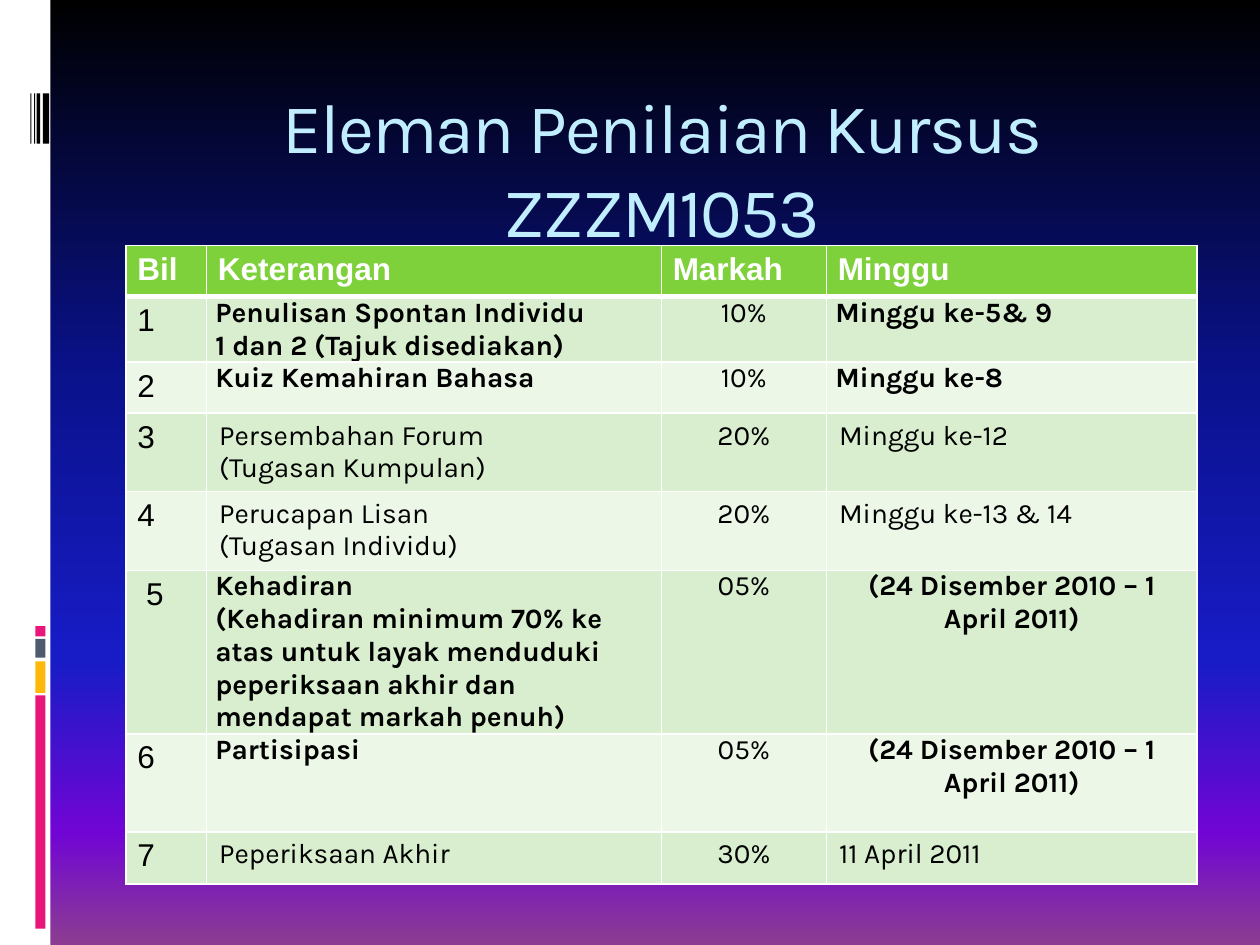
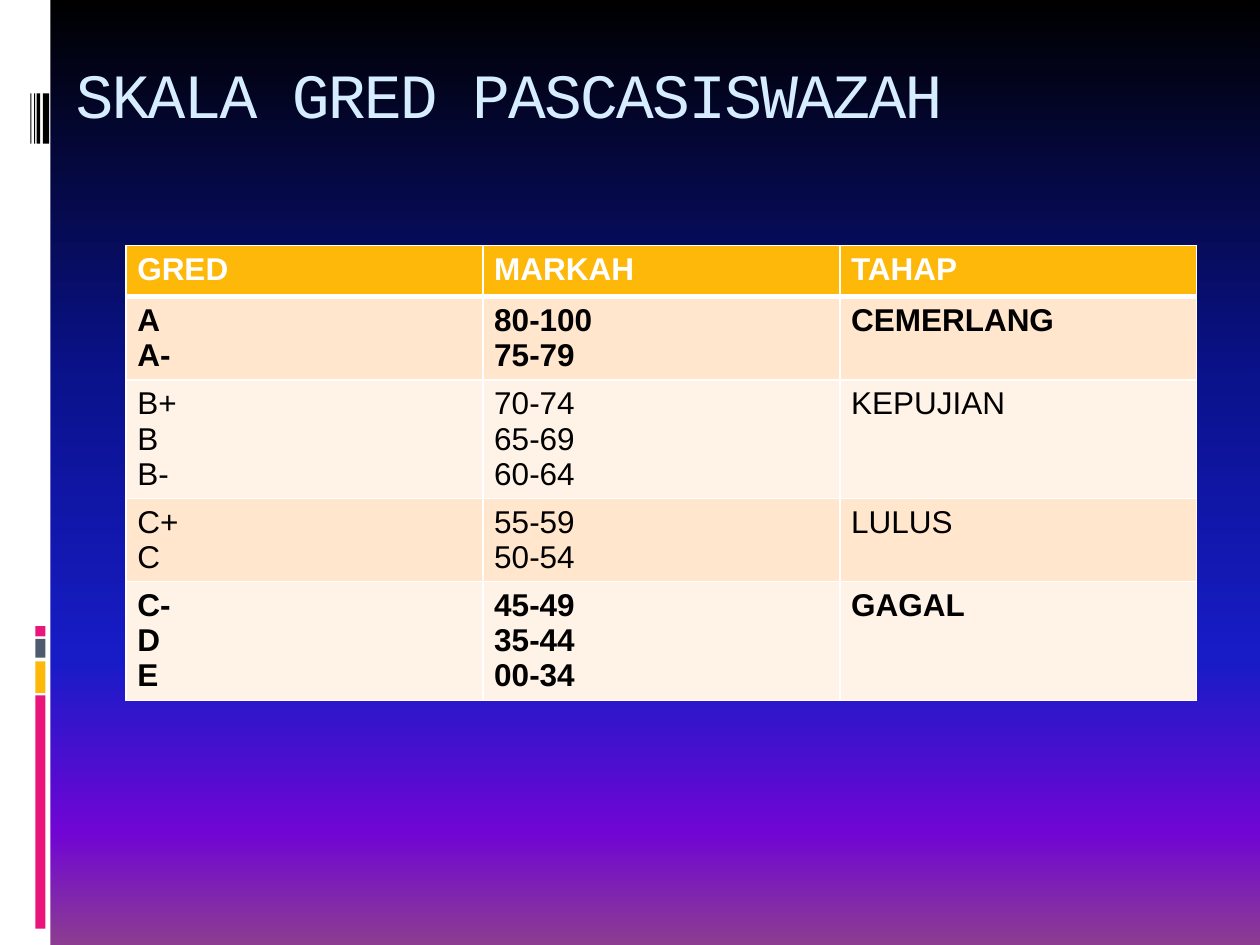
"""Build two slides with a course assessment table and a grading scale table."""
from lxml.etree import SubElement
from pptx import Presentation
from pptx.dml.color import RGBColor as RGB
from pptx.enum.shapes import MSO_SHAPE as SHAPE
from pptx.enum.text import MSO_ANCHOR as ANCHOR, MSO_AUTO_SIZE as AUTO, PP_ALIGN as ALIGN
from pptx.oxml.ns import qn
from pptx.util import Inches, Pt

C = {
    "white": "FFFFFF", "black": "000000", "pink": "EA157A", "amber": "FEB80A",
    "slate": "4E5B6F", "green": "7FD13B", "green_mid": "D8EECE", "green_pale": "ECF7E8",
    "amber_mid": "FFE6CC", "amber_pale": "FFF3E7", "title_cyan": "C1EEFF", "title_blue": "D6ECFF",
}
BACKDROP = [(0, "000000"), (40, "0A128C"), (70, "181CC7"), (88, "7005D4"), (100, "8C3D91")]
BANDS = [
    (0, 0, 4, 100, "white"),
    (2.8, 73.6, 0.8, 24.67, "pink"),
    (2.8, 70, 0.8, 3.33, "amber"),
    (2.8, 67.6, 0.8, 2, "slate"),
    (2.8, 66.27, 0.8, 1.07, "pink"),
    (3.4, 9.87, 0.5, 5.33, "black"),
    (2.9, 9.87, 0.3, 5.33, "black"),
    (2.7, 9.87, 0.1, 5.33, "black"),
    (2.4, 9.87, 0.1, 5.33, "black"),
]
SCHEDULE = "(24 Disember 2010 – 1 April 2011)"
SLIDES = [
    dict(
        title="Eleman Penilaian Kursus ZZZM1053", box=(10, 7.47, 85, 13.33), inset=0.1,
        font="Karla", size=40, color="title_cyan", align=ALIGN.CENTER,
        fills=("green", "green_mid", "green_pale"), cols=(6.4, 36.1, 13.1, 29.4),
        heights=(5.4, 6.88, 5.4, 8.25, 8.36, 17.25, 10.37, 5.5), bold_rows=(0, 1, 2, 5, 6),
        body_font="Karla", body_size=16, tight=True,
        rows=[
            ("Bil", "Keterangan", "Markah", "Minggu"),
            ("1", "Penulisan Spontan Individu\n1 dan 2 (Tajuk disediakan)", "10%", "Minggu ke-5& 9"),
            ("2", "Kuiz Kemahiran Bahasa", "10%", "Minggu ke-8"),
            ("3", "Persembahan Forum\n(Tugasan Kumpulan)", "20%", "Minggu ke-12"),
            ("4", "Perucapan Lisan\n(Tugasan Individu)", "20%", "Minggu ke-13 & 14"),
            ("5", "Kehadiran\n(Kehadiran minimum 70% ke atas untuk layak menduduki "
                  "peperiksaan akhir dan mendapat markah penuh)", "05%", SCHEDULE),
            ("6", "Partisipasi", "05%", SCHEDULE),
            ("7", "Peperiksaan Akhir", "30%", "11 April 2011"),
        ],
    ),
    dict(
        title="SKALA GRED PASCASISWAZAH", box=(5, 4, 90, 9.6), inset=0.14,
        font="Courier New", size=36, color="title_blue", align=ALIGN.LEFT,
        fills=("amber", "amber_mid", "amber_pale"), cols=(28.33,) * 3,
        heights=(5.4, 8.78, 12.5, 8.78, 12.6), bold_rows=(0, 1, 4),
        body_font="Arial", body_size=18, tight=False,
        rows=[
            ("GRED", "MARKAH", "TAHAP"),
            ("A\nA-", "80-100\n75-79", "CEMERLANG"),
            ("B+\nB\nB-", "70-74\n65-69\n60-64", "KEPUJIAN"),
            ("C+\nC", "55-59\n50-54", "LULUS"),
            ("C-\nD\nE", "45-49\n35-44\n00-34", "GAGAL"),
        ],
    ),
]


def style_runs(tf, font, size, color, bold, align):
    """Format every run of a text frame."""
    for p in tf.paragraphs:
        p.alignment = align
        for r in p.runs:
            r.font.name, r.font.size, r.font.bold = font, Pt(size), bold
            r.font.color.rgb = RGB.from_string(C[color])


def set_borders(cell, top, bottom):
    """Draw white borders of the given top and bottom widths."""
    tcPr = cell._tc.get_or_add_tcPr()
    for side, width in (("L", 1), ("R", 1), ("T", top), ("B", bottom)):
        ln = SubElement(tcPr, qn(f"a:ln{side}"), w=str(Pt(width)))
        SubElement(SubElement(ln, qn("a:solidFill")), qn("a:srgbClr"), val=C["white"])


prs = Presentation()
prs.slide_width, prs.slide_height = Inches(10), Inches(7.5)
vw, vh = prs.slide_width / 100, prs.slide_height / 100
master = prs.slide_master

fill = master.background.fill
fill.gradient()
fill.gradient_angle = 270
stops = next(master.element.iter(qn("a:gsLst")))
for stop in list(stops):
    stops.remove(stop)
for pos, color in BACKDROP:
    SubElement(SubElement(stops, qn("a:gs"), pos=str(pos * 1000)), qn("a:srgbClr"), val=color)

for number, data in enumerate(SLIDES):
    s = prs.slides.add_slide(prs.slide_layouts[5])

    if number == 0:
        for i, (x, y, w, h, color) in enumerate(BANDS):
            sp = s.shapes.add_shape(SHAPE.RECTANGLE, int(x * vw), int(y * vh), int(w * vw), int(h * vh))
            sp.shadow.inherit = False
            sp.fill.solid()
            sp.fill.fore_color.rgb = RGB.from_string(C[color])
            sp.line.fill.background()
            master.shapes.element.insert(2 + i, sp.element)

    title = s.shapes.title
    x, y, w, h = data["box"]
    title.left, title.top, title.width, title.height = int(x * vw), int(y * vh), int(w * vw), int(h * vh)
    tf = title.text_frame
    tf.text = data["title"]
    tf.word_wrap, tf.auto_size, tf.vertical_anchor = True, AUTO.NONE, ANCHOR.TOP
    tf.margin_top = Inches(data["inset"])
    style_runs(tf, data["font"], data["size"], data["color"], False, data["align"])
    tf.paragraphs[0].runs[0].font._element.set("spc", "-100")

    rows, cols, heights = data["rows"], data["cols"], data["heights"]
    table = s.shapes.add_table(len(rows), len(cols), int(10 * vw), int(26 * vh),
                               int(85 * vw), int(sum(heights) * vh)).table
    for column, width in zip(table.columns, cols):
        column.width = int(width * vw)
    for i, (row, height) in enumerate(zip(rows, heights)):
        table.rows[i].height = int(height * vh)
        for j, text in enumerate(row):
            cell = table.cell(i, j)
            set_borders(cell, 3 if i == 1 else 1, 3 if i == 0 else 1)
            cell.fill.solid()
            shade = data["fills"][0 if i == 0 else 2 - i % 2]
            cell.fill.fore_color.rgb = RGB.from_string(C[shade])
            cell.text_frame.text = text
            bold, align = i in data["bold_rows"], ALIGN.LEFT
            font, size = "Arial", 18
            cell.margin_left = cell.margin_right = Inches(0.09)
            if data["tight"] and i > 0:
                if j == 0:
                    bold = False
                    cell.margin_left = Inches(0.16 if text == "5" else 0.09)
                else:
                    font, size = data["body_font"], data["body_size"]
                    if bold:
                        cell.margin_left = cell.margin_right = Inches(0.07)
                        cell.margin_top = cell.margin_bottom = 0
                    else:
                        cell.margin_left = cell.margin_right = Inches(0.1)
                    if j == 2 or text == SCHEDULE:
                        align = ALIGN.CENTER
                    bold = bold and j != 2
            style_runs(cell.text_frame, font, size, "black" if i else "white", bold, align)

prs.save("out.pptx")
